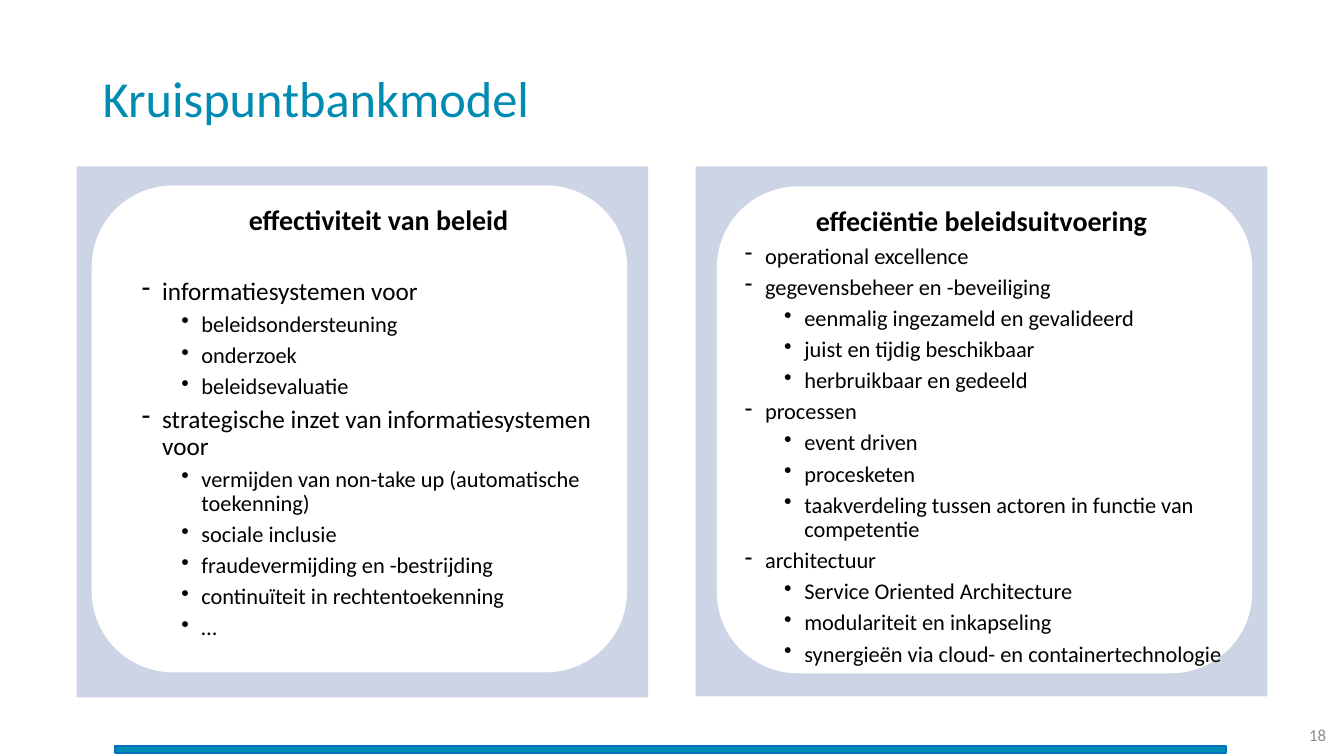
import dataclasses

import lxml.etree
import pptx
import pptx.dml.color
import pptx.enum.shapes
import pptx.enum.text
import pptx.oxml.ns
import pptx.util

Inches = pptx.util.Inches
Pt = pptx.util.Pt
RGB = pptx.dml.color.RGBColor.from_string
SHAPES = pptx.enum.shapes.MSO_SHAPE
ALIGN = pptx.enum.text.PP_ALIGN
ANCHOR = pptx.enum.text.MSO_ANCHOR
qn = pptx.oxml.ns.qn


@dataclasses.dataclass(frozen=True)
class Theme:
    font: str = "Calibri"
    accent: str = "008CB2"
    bar_line: str = "0070C0"
    panel: str = "002B82"
    panel_alpha: int = 20
    card: str = "FFFFFF"
    text: str = "000000"
    muted: str = "8C8C8C"
    title_size: int = 36
    heading_size: int = 20
    large_size: int = 18
    body_size: int = 16
    number_size: int = 12


theme = Theme()
presentation = pptx.Presentation()
presentation.slide_width = Inches(13.33)
presentation.slide_height = Inches(7.5)
slide = presentation.slides.add_slide(presentation.slide_layouts[6])


def add_block(kind, box, color):
    shape = slide.shapes.add_shape(kind, *map(Inches, box))
    shape.shadow.inherit = False
    shape.fill.solid()
    shape.fill.fore_color.rgb = RGB(color)
    shape.line.fill.background()
    return shape


def write(paragraph, text, size, color, bold=False):
    """Fill a paragraph with styled runs, one per line of the text."""
    for index, line in enumerate(text.split("\n")):
        if index:
            paragraph.add_line_break()
        run = paragraph.add_run()
        run.text = line
        run.font.name = theme.font
        run.font.size = Pt(size)
        run.font.bold = bold
        run.font.color.rgb = RGB(color)


# Footer bar, slide number and title
bar = add_block(SHAPES.RECTANGLE, (1.14, 7.4, 11.02, 0.07), theme.accent)
bar.line.color.rgb = RGB(theme.bar_line)
bar.line.width = Pt(1)

labels = [
    ((12.43, 7.09, 0.82, 0.4), "18", theme.number_size, theme.muted, ALIGN.RIGHT, 1),
    ((0.92, 0.28, 11.5, 1.45), "Kruispuntbankmodel", theme.title_size, theme.accent, ALIGN.LEFT, 0.9),
]
for box, text, size, color, alignment, spacing in labels:
    frame = slide.shapes.add_textbox(*map(Inches, box)).text_frame
    frame.word_wrap = True
    frame.vertical_anchor = ANCHOR.MIDDLE
    frame.paragraphs[0].alignment = alignment
    frame.paragraphs[0].line_spacing = spacing
    write(frame.paragraphs[0], text, size, color)

# Two columns; each topic is followed by its detail points
columns = [
    {
        "panel": (0.76, 1.65, 5.67, 5.27),
        "card": (0.91, 1.84, 5.31, 4.83),
        "text": (0.92, 2, 5.67, 4.76),
        "heading": "effectiviteit van beleid",
        "topic_size": theme.large_size,
        "first_gap": 30,
        "topics": [
            ("informatiesystemen voor",
             ["beleidsondersteuning", "onderzoek", "beleidsevaluatie"]),
            ("strategische inzet van informatiesystemen \nvoor",
             ["vermijden van non-take up (automatische toekenning)",
              "sociale inclusie",
              "fraudevermijding en -bestrijding",
              "continuïteit in rechtentoekenning",
              "…"]),
        ],
    },
    {
        "panel": (6.9, 1.65, 5.67, 5.26),
        "card": (7.11, 1.85, 5.31, 4.83),
        "text": (6.9, 2.01, 5.67, 4.76),
        "heading": "effeciëntie beleidsuitvoering",
        "topic_size": theme.body_size,
        "first_gap": 5,
        "topics": [
            ("operational excellence", []),
            ("gegevensbeheer en -beveiliging",
             ["eenmalig ingezameld en gevalideerd",
              "juist en tijdig beschikbaar",
              "herbruikbaar en gedeeld"]),
            ("processen",
             ["event driven",
              "procesketen",
              "taakverdeling tussen actoren in functie van competentie"]),
            ("architectuur",
             ["Service Oriented Architecture",
              "modulariteit en inkapseling",
              "synergieën via cloud- en containertechnologie"]),
        ],
    },
]

for column in columns:
    panel = add_block(SHAPES.RECTANGLE, column["panel"], theme.panel)
    panel_color = panel.fill._xPr.find(".//" + qn("a:srgbClr"))
    alpha = lxml.etree.SubElement(panel_color, qn("a:alpha"))
    alpha.set("val", str(theme.panel_alpha * 1000))
    add_block(SHAPES.ROUNDED_RECTANGLE, column["card"], theme.card)

    frame = slide.shapes.add_textbox(*map(Inches, column["text"])).text_frame
    frame.word_wrap = True
    heading = frame.paragraphs[0]
    heading.alignment = ALIGN.CENTER
    heading.line_spacing = 0.9
    write(heading, column["heading"], theme.heading_size, theme.text, bold=True)

    items = []
    for topic, details in column["topics"]:
        items.append((1, "-", 0.59, topic, column["topic_size"]))
        items += [(2, "•", 0.98, detail, theme.body_size) for detail in details]

    for index, (level, bullet, indent, text, size) in enumerate(items):
        paragraph = frame.add_paragraph()
        properties = paragraph._p.get_or_add_pPr()
        properties.set("marL", str(Inches(indent)))
        properties.set("indent", str(Inches(-0.2)))
        lxml.etree.SubElement(properties, qn("a:buChar")).set("char", bullet)
        paragraph.level = level
        paragraph.line_spacing = 0.9
        paragraph.space_before = Pt(5 if index else column["first_gap"])
        write(paragraph, text, size, theme.text)

presentation.save("out.pptx")
